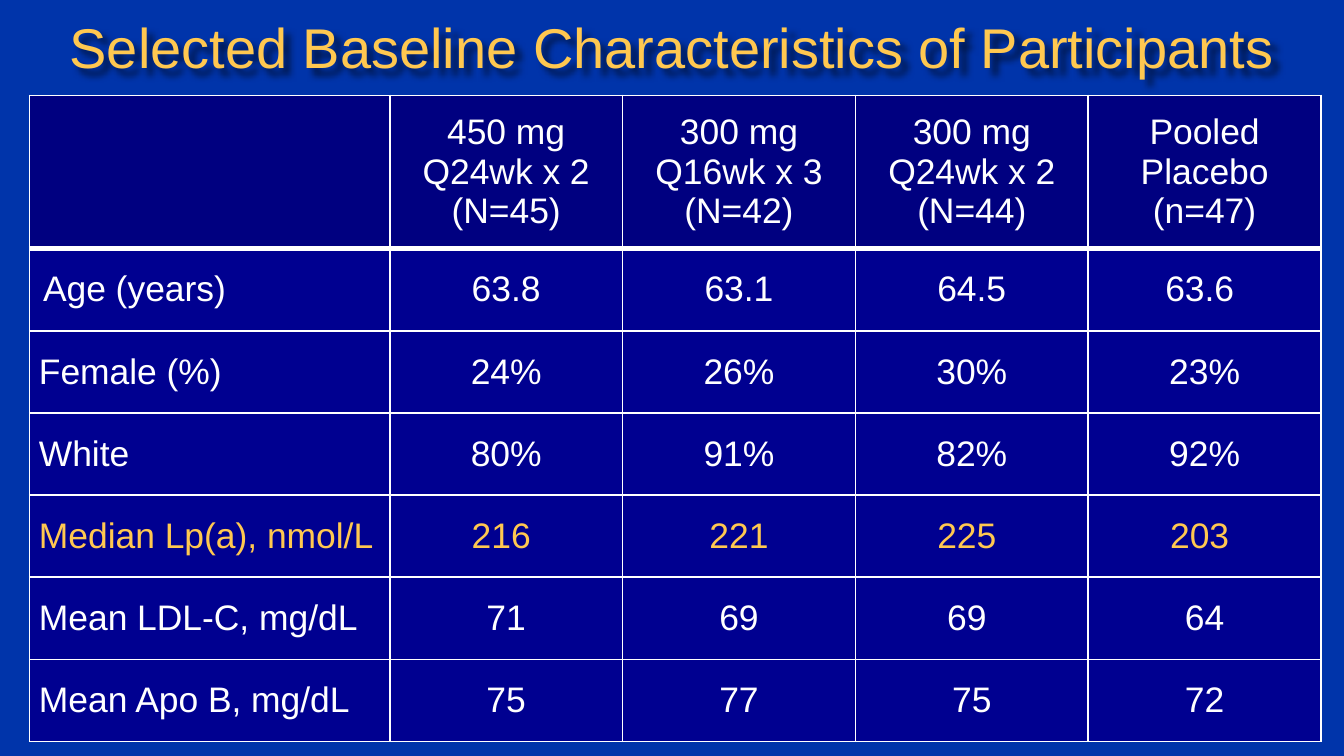
from lxml import etree
from pptx import Presentation
from pptx.dml.color import RGBColor
from pptx.enum.text import MSO_ANCHOR, PP_ALIGN
from pptx.oxml.ns import qn
from pptx.util import Inches, Pt

CENTER, LEFT = PP_ALIGN.CENTER, PP_ALIGN.LEFT
MIDDLE = MSO_ANCHOR.MIDDLE

BACKGROUND = RGBColor(0x00, 0x34, 0xAA)
HEADER_FILL = RGBColor(0x00, 0x00, 0x80)
BODY_FILL = RGBColor(0x00, 0x00, 0x90)
WHITE = RGBColor(0xFF, 0xFF, 0xFF)
GOLD = RGBColor(0xFF, 0xC8, 0x50)
BLACK = RGBColor(0x00, 0x00, 0x00)

TITLE = "Selected Baseline Characteristics of Participants"
ROWS = [
    ["", "450 mg\nQ24wk x 2 (N=45)", "300 mg\nQ16wk x 3 (N=42)",
     "300 mg\nQ24wk x 2 (N=44)", "Pooled Placebo\n(n=47)"],
    ["Age (years)", "63.8", "63.1", "64.5", "63.6 "],
    ["Female (%)", "24%", "26%", "30%", "23%"],
    ["White", "80%", "91%", "82%", "92%"],
    ["Median Lp(a), nmol/L", "216 ", "221", "225 ", "203 "],
    ["Mean LDL-C, mg/dL", "71", "69", "69 ", "64"],
    ["Mean Apo B, mg/dL", "75", "77", "75", "72"],
]
AGE_ROW, HIGHLIGHT_ROW = 1, 4

SLIDE_WIDTH = 10
SLIDE_HEIGHT = SLIDE_WIDTH * 9 / 16
TITLE_HEIGHT = 0.69
TABLE_LEFT, TABLE_TOP, TABLE_WIDTH, TABLE_HEIGHT = 0.22, 0.71, 9.61, 4.81
LABEL_WIDTH, HEADER_HEIGHT = 2.68, 1.14
ARM_WIDTH = (TABLE_WIDTH - LABEL_WIDTH) / (len(ROWS[0]) - 1)
BODY_HEIGHT = (TABLE_HEIGHT - HEADER_HEIGHT) / (len(ROWS) - 1)

CELL_FORMAT = {
    "vertical_anchor": MIDDLE,
    "margin_left": Inches(0.07), "margin_right": Inches(0.07),
    "margin_top": 0, "margin_bottom": 0,
}


def write(frame, text, size, color, align):
    frame.text = text
    frame.word_wrap = True
    font_format = {"name": "Arial", "size": Pt(size), "bold": False}
    for paragraph in frame.paragraphs:
        paragraph.alignment = align
        for run in paragraph.runs:
            for key, value in font_format.items():
                setattr(run.font, key, value)
            run.font.color.rgb = color


def add_color(parent, color):
    return etree.SubElement(parent, qn("a:srgbClr"), val=str(color))


def add_shadow(shape):
    effects = etree.SubElement(shape._element.spPr, qn("a:effectLst"))
    shadow = etree.SubElement(effects, qn("a:outerShdw"), blurRad=str(Pt(4)),
                              dist=str(Pt(4)), dir="2700000", algn="tl", rotWithShape="0")
    etree.SubElement(add_color(shadow, BLACK), qn("a:alpha"), val="60000")


def add_borders(cell, widths):
    properties = cell._tc.get_or_add_tcPr()
    for index, (side, width) in enumerate(widths.items()):
        line = etree.Element(qn(f"a:ln{side}"), w=str(Pt(width)))
        add_color(etree.SubElement(line, qn("a:solidFill")), WHITE)
        properties.insert(index, line)


presentation = Presentation()
presentation.slide_width = Inches(SLIDE_WIDTH)
presentation.slide_height = Inches(SLIDE_HEIGHT)
slide = presentation.slides.add_slide(presentation.slide_layouts[6])
slide.background.fill.solid()
slide.background.fill.fore_color.rgb = BACKGROUND

title = slide.shapes.add_textbox(0, 0, Inches(SLIDE_WIDTH), Inches(TITLE_HEIGHT))
write(title.text_frame, TITLE, 30, GOLD, CENTER)
title.text_frame.vertical_anchor = MIDDLE
add_shadow(title)

table = slide.shapes.add_table(
    len(ROWS), len(ROWS[0]), Inches(TABLE_LEFT), Inches(TABLE_TOP),
    Inches(TABLE_WIDTH), Inches(TABLE_HEIGHT)).table
for c, column in enumerate(table.columns):
    column.width = Inches(ARM_WIDTH if c else LABEL_WIDTH)

for r, values in enumerate(ROWS):
    table.rows[r].height = Inches(BODY_HEIGHT if r else HEADER_HEIGHT)
    for c, value in enumerate(values):
        cell = table.cell(r, c)
        for key, setting in CELL_FORMAT.items():
            setattr(cell, key, setting)
        write(cell.text_frame, value, 19, GOLD if r == HIGHLIGHT_ROW else WHITE,
              CENTER if c else LEFT)
        cell.fill.solid()
        cell.fill.fore_color.rgb = BODY_FILL if r else HEADER_FILL
        add_borders(cell, {"L": 1, "R": 1, "T": 3 if r == 1 else 1, "B": 1 if r else 3})
table.cell(AGE_ROW, 0).margin_left = Inches(0.1)

presentation.save("out.pptx")
